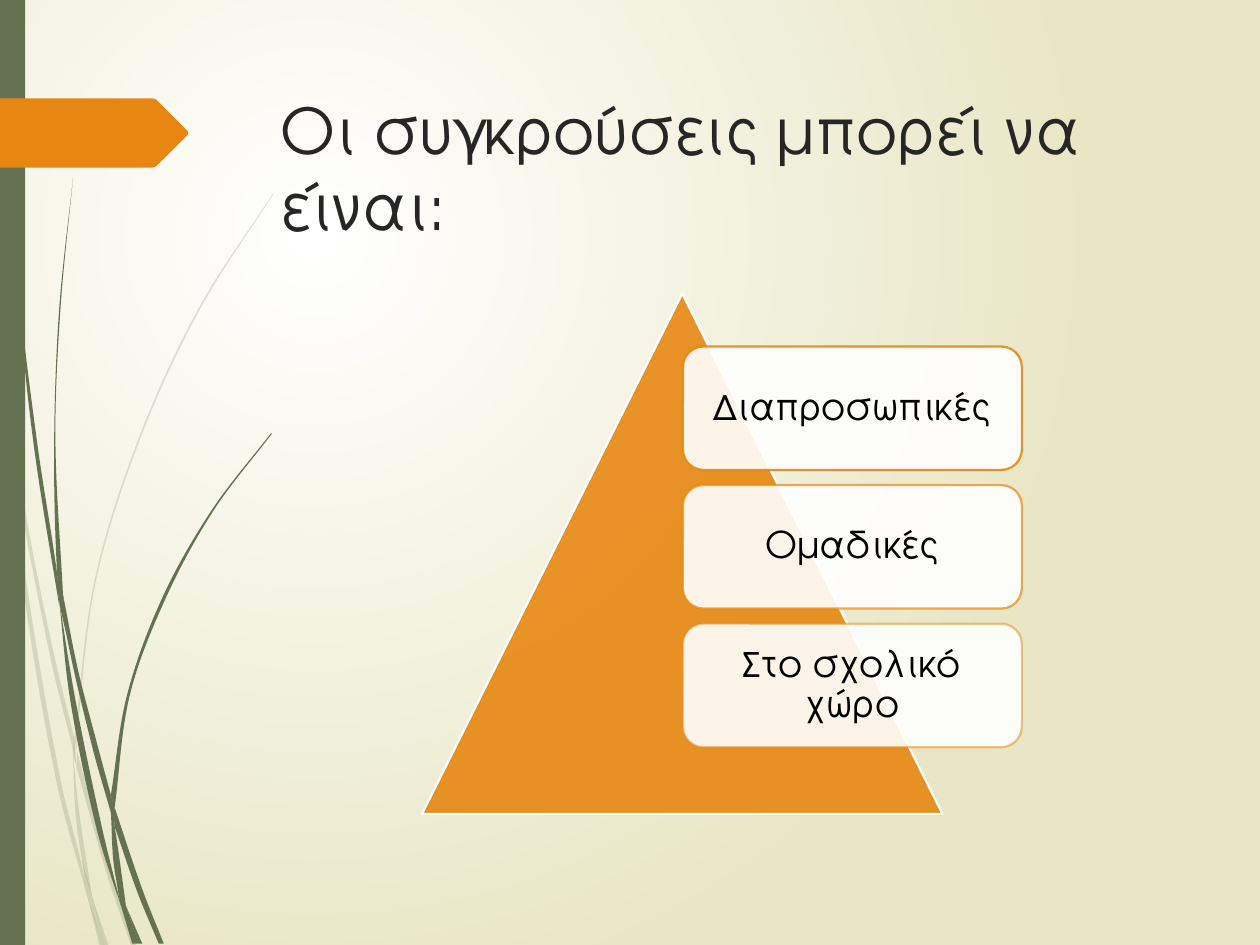
from math import dist

from lxml import etree
from pptx import Presentation
from pptx.dml.color import RGBColor
from pptx.enum.shapes import MSO_SHAPE
from pptx.enum.text import MSO_ANCHOR, PP_ALIGN
from pptx.oxml.ns import qn
from pptx.util import Inches, Pt

RECTANGLE = MSO_SHAPE.RECTANGLE
TRIANGLE = MSO_SHAPE.ISOSCELES_TRIANGLE
ROUNDED = MSO_SHAPE.ROUNDED_RECTANGLE
MIDDLE = MSO_ANCHOR.MIDDLE
TOP = MSO_ANCHOR.TOP
CENTER = PP_ALIGN.CENTER
LEFT = PP_ALIGN.LEFT

FONT = "TeX Gyre Adventor"
COLORS = {
    "white": "FFFFFF",
    "sand": "E8E6C4",
    "green": "647252",
    "orange": "E78712",
    "title": "262626",
    "black": "000000",
}
GRID = Inches(0.01)

PALE_BLADES = [
    ([(8, 350), (0, 282)], [(8, 350), (0, 299)]),
    ([(10, 345), (12, 376), (40, 522), (59, 599)],
     [(10, 345), (25, 433), (43, 520), (59, 586)]),
    ([(61, 596), (88, 692), (108, 750)], [(61, 610), (85, 694), (104, 750)]),
    ([(73, 711), (86, 750)], [(73, 711), (83, 750)]),
    ([(8, 350), (19, 470), (45, 621), (70, 714)],
     [(8, 350), (22, 469), (48, 619), (64, 683), (70, 714)]),
    ([(58, 599), (60, 646), (67, 692), (73, 711)],
     [(58, 599), (63, 646), (73, 711)]),
    ([(59, 586), (75, 461), (110, 348), (158, 244), (217, 153)],
     [(61, 596), (61, 584), (76, 462), (111, 349), (159, 245), (217, 154)]),
    ([(70, 714), (79, 750)], [(70, 714), (82, 750)]),
    ([(59, 586), (58, 599), (61, 608)], [(59, 586), (61, 610)]),
    ([(65, 683), (70, 714), (82, 750)], [(65, 683), (73, 711), (83, 750)]),
]
DARK_BLADES = [
    ([(2, 0), (5, 110), (14, 233), (27, 355), (47, 481)],
     [(3, 0), (6, 109), (15, 232), (30, 355), (45, 453), (47, 481)]),
    ([(50, 472), (53, 505), (73, 592), (88, 645)],
     [(50, 472), (62, 532), (77, 590), (88, 631)]),
    ([(91, 641), (113, 706), (130, 749)], [(91, 656), (109, 708), (126, 749)]),
    ([(47, 477), (56, 557), (77, 659), (97, 722)],
     [(47, 477), (60, 556), (81, 657), (97, 722)]),
    ([(58, 141), (47, 245), (43, 349), (45, 449), (49, 472)],
     [(58, 141), (48, 245), (44, 349), (50, 472)]),
    ([(100, 719), (110, 749)], [(100, 719), (113, 749)]),
    ([(45, 449), (47, 477), (53, 505)], [(45, 449), (50, 472), (53, 505)]),
    ([(215, 344), (168, 405), (129, 474), (101, 551), (88, 631)],
     [(216, 344), (169, 406), (131, 476), (103, 552), (91, 641)]),
    ([(97, 722), (105, 749)], [(97, 722), (108, 749)]),
    ([(88, 645), (91, 691), (100, 719)], [(88, 645), (91, 656), (100, 719)]),
    ([(88, 631), (88, 645), (91, 656)], [(88, 631), (91, 641), (91, 656)]),
    ([(91, 691), (97, 722), (108, 749)], [(91, 691), (100, 719), (110, 749)]),
]
ARROW = [(0, 78), (121, 78), (124, 79), (149, 104), (149, 107), (124, 132),
         (121, 133), (0, 133)]
CONFLICTS = [("Διαπροσωπικές", 90), ("Ομαδικές", 70), ("Στο σχολικό χώρο", 50)]


def rgb(name):
    return RGBColor.from_string(COLORS[name])


def paint(fill, color, opacity=100):
    fill.solid()
    fill.fore_color.rgb = rgb(color)
    if opacity < 100:
        node = fill._xPr.find(qn("a:solidFill"))[0]
        etree.SubElement(node, qn("a:alpha")).set("val", str(opacity * 1000))


def style(shape, color, opacity=100, line=None, line_opacity=100):
    shape.shadow.inherit = False
    paint(shape.fill, color, opacity)
    if line:
        shape.line.width = Pt(1.25)
        paint(shape.line.fill, line, line_opacity)
    else:
        shape.line.fill.background()


def smooth(edge):
    tangents = []
    for index in range(len(edge)):
        near = edge[max(index - 1, 0):index + 2]
        length = sum(dist(a, b) for a, b in zip(near, near[1:]))
        tangents.append([(b - a) / length for a, b in zip(near[0], near[-1])])
    points = []
    for start, end, leave, arrive in zip(edge, edge[1:], tangents, tangents[1:]):
        reach = dist(start, end) / 3
        points.append(tuple(a + u * reach for a, u in zip(start, leave)))
        points.append(tuple(b - v * reach for b, v in zip(end, arrive)))
        points.append(end)
    return points


def add_outline(page, points):
    corners = [(x * GRID, y * GRID) for x, y in points]
    builder = page.shapes.build_freeform(*corners[0])
    builder.add_line_segments(corners[1:], close=True)
    return builder.convert_to_shape()


def bend(shape):
    lines = list(shape.element.iter(qn("a:lnTo")))
    for start in range(0, len(lines), 3):
        trio = lines[start:start + 3]
        curve = etree.Element(qn("a:cubicBezTo"))
        trio[0].addprevious(curve)
        for line in trio:
            curve.append(line[0])
            line.getparent().remove(line)


def add_blades(page, blades, opacity=100):
    for left_edge, right_edge in blades:
        back_edge = right_edge[::-1]
        tip, turn = left_edge[-1], back_edge[0]
        joint = [tip, turn, turn] if tip != turn else []
        outline = left_edge[:1] + smooth(left_edge) + joint + smooth(back_edge)
        blade = add_outline(page, outline)
        bend(blade)
        style(blade, "green", opacity)


def add_preset(page, kind, place, *look):
    shape = page.shapes.add_shape(kind, *(Inches(length) for length in place))
    style(shape, *look)
    return shape


def write(box, text, size, color, align, anchor):
    frame = box.text_frame
    frame.word_wrap = True
    frame.vertical_anchor = anchor
    frame.text = text
    para = frame.paragraphs[0]
    para.alignment = align
    span = para.runs[0]
    span.font.name = FONT
    span.font.size = Pt(size)
    span.font.color.rgb = rgb(color)
    return frame


def add_background(page):
    fill = page.background.fill
    fill.gradient()
    for stop, color, position in zip(fill.gradient_stops, ("white", "sand"), (0, 1)):
        stop.color.rgb = rgb(color)
        stop.position = position
    gradient = page.element.find(".//" + qn("a:gradFill"))
    gradient.remove(gradient.find(qn("a:lin")))
    circle = etree.SubElement(gradient, qn("a:path"), {"path": "circle"})
    focus = {"l": "50000", "t": "50000", "r": "100000", "b": "100000"}
    etree.SubElement(circle, qn("a:fillToRect"), focus)


def add_conflict(page, row, text, line_opacity):
    place = (5.42, 2.75 + row * 1.1, 2.69, 0.98)
    box = add_preset(page, ROUNDED, place, "white", 90, "orange", line_opacity)
    frame = write(box, text, 21, "black", CENTER, MIDDLE)
    frame.margin_left = frame.margin_right = Inches(0.09)
    frame.margin_top = frame.margin_bottom = Inches(0.09)
    frame.paragraphs[0].line_spacing = 0.9


def main():
    deck = Presentation()
    deck.slide_width, deck.slide_height = Inches(10), Inches(7.5)
    page = deck.slides.add_slide(deck.slide_layouts[6])
    add_background(page)
    add_blades(page, PALE_BLADES, 20)
    add_blades(page, DARK_BLADES)
    add_preset(page, RECTANGLE, (0, 0, 0.2, 7.5), "green")
    style(add_outline(page, ARROW), "orange")
    title = page.shapes.add_textbox(Inches(2.13), Inches(0.68), Inches(7.21), Inches(1.4))
    write(title, "Οι συγκρούσεις μπορεί να είναι:", 36, "title", LEFT, TOP)
    add_preset(page, TRIANGLE, (3.35, 2.33, 4.13, 4.13), "orange", 90, "white")
    for row, (text, line_opacity) in enumerate(CONFLICTS):
        add_conflict(page, row, text, line_opacity)
    deck.save("out.pptx")


if __name__ == "__main__":
    main()
